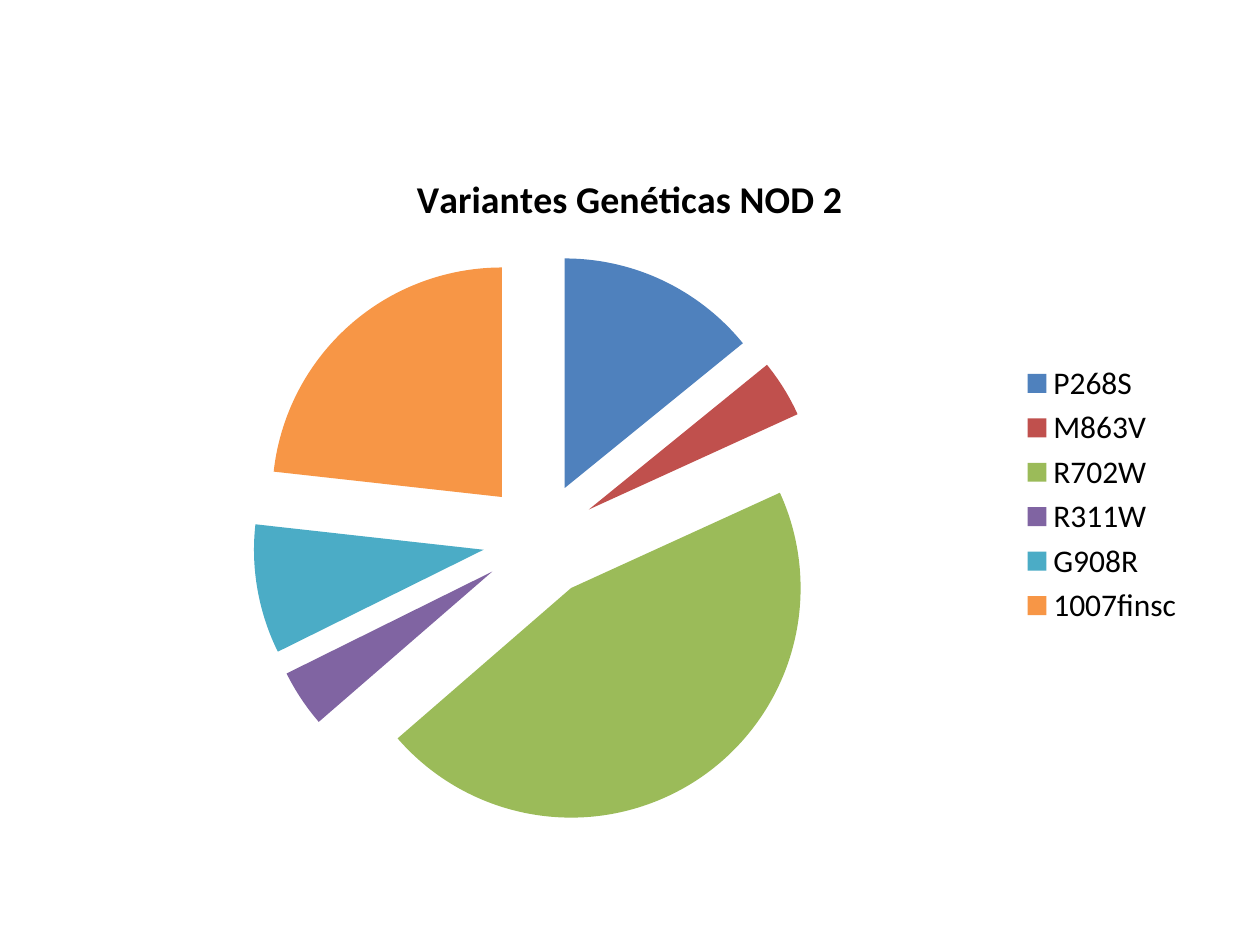
from lxml.etree import Element
from pptx import Presentation
from pptx.chart.data import CategoryChartData
from pptx.dml.color import RGBColor
from pptx.enum.chart import XL_CHART_TYPE as ChartType, XL_LEGEND_POSITION as LegendPos
from pptx.oxml.ns import qn
from pptx.util import Inches, Pt

TITLE = "Variantes Genéticas NOD 2"
BLACK = RGBColor(0x00, 0x00, 0x00)
VARIANTS = [
    ("P268S ", 14, RGBColor(0x4F, 0x81, 0xBD)),
    ("M863V", 4, RGBColor(0xC0, 0x50, 0x4D)),
    ("R702W", 45, RGBColor(0x9B, 0xBB, 0x59)),
    ("R311W", 4, RGBColor(0x80, 0x64, 0xA2)),
    ("G908R", 9, RGBColor(0x4B, 0xAC, 0xC6)),
    ("1007finsc", 23, RGBColor(0xF7, 0x96, 0x46)),
]
EXPLOSION = 25


def style_font(font, size, bold=False):
    """Apply the chart's typeface, colour, size and weight."""
    font.name, font.size, font.bold = "Calibri", Pt(size), bold
    font.color.rgb = BLACK


def add_variant_pie(slide):
    """Add the exploded pie of variants with its title and legend."""
    data = CategoryChartData()
    data.categories = [name for name, _, _ in VARIANTS]
    data.add_series(TITLE, [value for _, value, _ in VARIANTS])
    box = [Inches(n) for n in (0.5, 1.15, 9, 5.55)]
    chart = slide.shapes.add_chart(ChartType.PIE, *box, data).chart
    style_font(chart.font, 18)

    chart.has_title = True
    tf = chart.chart_title.text_frame
    tf.text = TITLE
    style_font(tf.paragraphs[0].runs[0].font, 21.6, True)
    chart.chart_title.include_in_layout = False

    chart.has_legend = True
    chart.legend.position = LegendPos.RIGHT
    chart.legend.include_in_layout = False

    plot = chart.plots[0]
    plot.vary_by_categories = True
    series = plot.series[0]
    for i, (_, _, color) in enumerate(VARIANTS):
        fill = series.points[i].format.fill
        fill.solid()
        fill.fore_color.rgb = color
    explosion = Element(qn("c:explosion"), val=str(EXPLOSION))
    series._element.find(qn("c:dPt")).addprevious(explosion)


def main():
    """Build the slide and save it."""
    prs = Presentation()
    prs.slide_width, prs.slide_height = Inches(10), Inches(7.5)
    add_variant_pie(prs.slides.add_slide(prs.slide_layouts[6]))
    prs.save("out.pptx")


if __name__ == "__main__":
    main()
